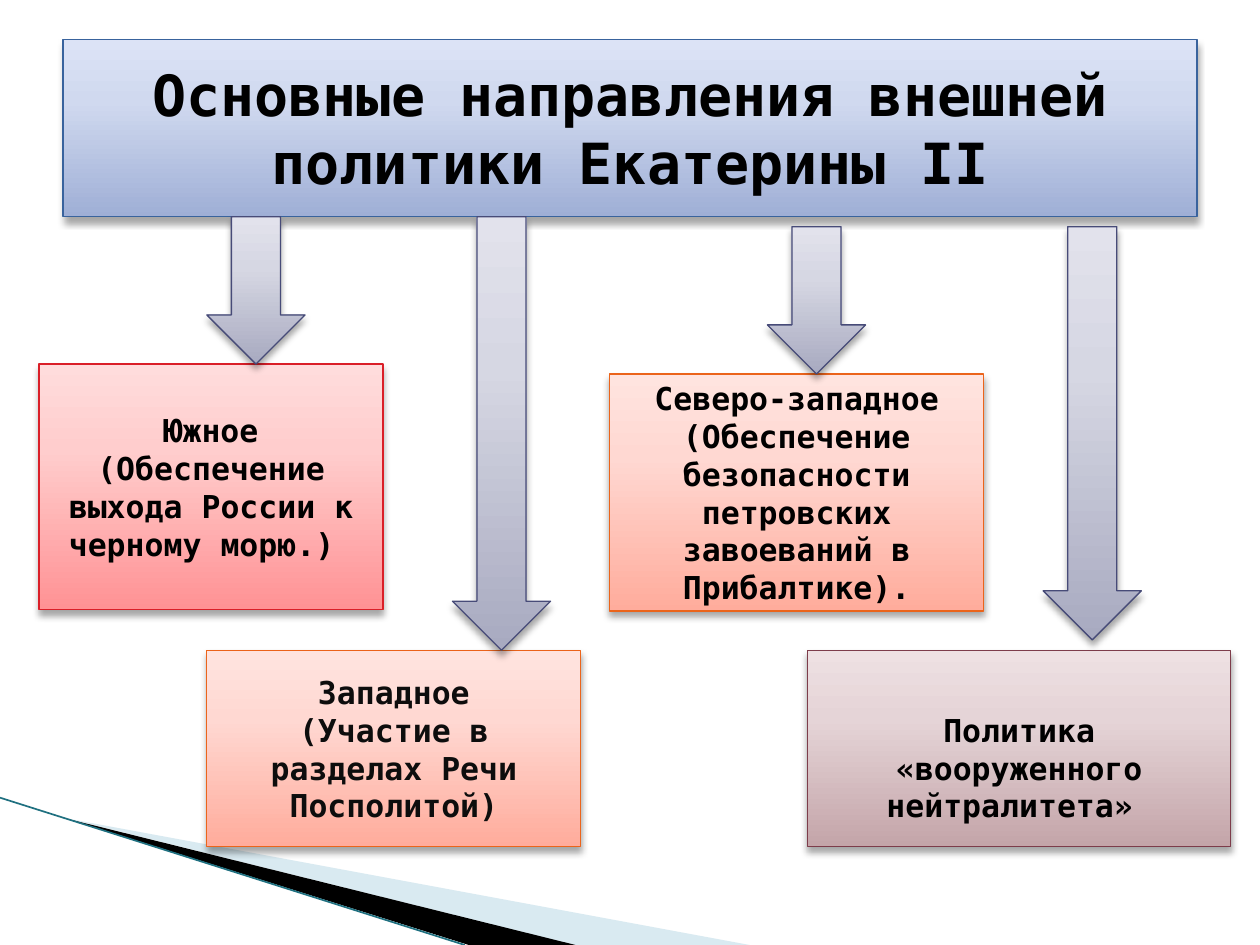
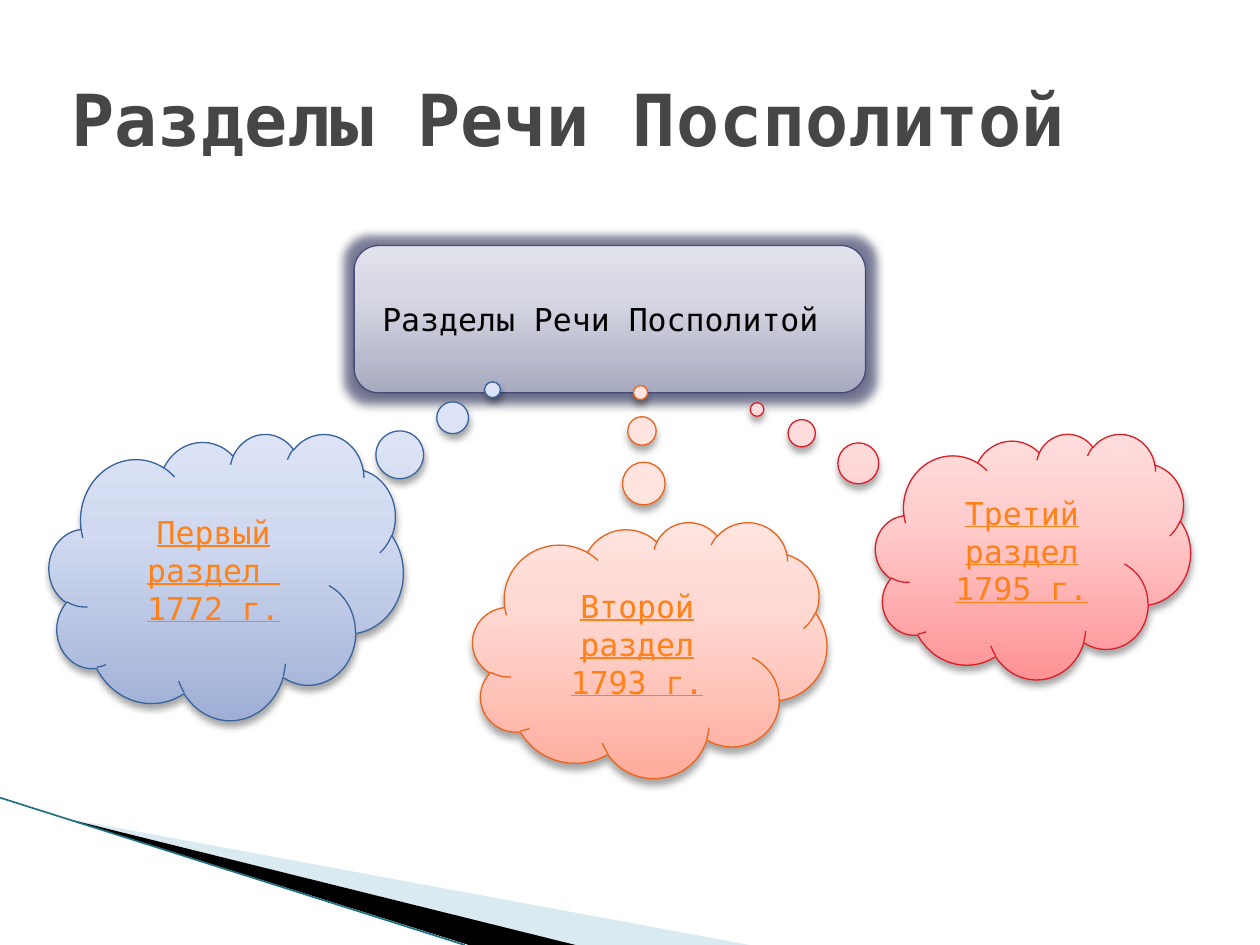
from collections import namedtuple
from copy import deepcopy
from dataclasses import dataclass

from lxml.etree import SubElement
from pptx import Presentation
from pptx.dml.color import RGBColor
from pptx.enum.shapes import MSO_CONNECTOR as Connector, MSO_SHAPE as Shape
from pptx.enum.text import MSO_ANCHOR as Anchor, MSO_AUTO_SIZE as AutoSize, PP_ALIGN as Align
from pptx.oxml.ns import qn
from pptx.util import Cm, Pt

Box = namedtuple("Box", "left top width height")  # centimetres
Tone = namedtuple("Tone", "dark middle light line")


@dataclass(frozen=True)
class Theme:
    font: str = "DejaVu Sans Mono"
    banner_size: float = 32.4
    title_size: float = 41
    text_size: float = 18
    outline: float = 0.75
    black: str = "000000"
    soft_black: str = "0D0D0D"
    grey: str = "464646"
    accent: str = "FF8119"
    pale_blue: str = "A0CBDC"
    teal: str = "1F7080"
    blue: Tone = Tone("9FAFD6", "D0D9EF", "DCE3F6", "39639D")
    red: Tone = Tone("FF9294", "FFCDCD", "FFDCDC", "DA1F28")
    orange: Tone = Tone("FFAC9C", "FFD8D2", "FFE4DF", "EB641B")
    plum: Tone = Tone("C4A5A9", "E5D4D7", "EEE0E2", "7D3C4A")
    slate: Tone = Tone("A8AAC0", "D6D7E3", "E2E2EC", "474B78")


THEME = Theme()
PAGE = Box(0, 0, 25.4, 19.05)


def rgb(code):
    return RGBColor.from_string(code)


def set_values(target, values):
    for name, value in values.items():
        setattr(target, name, value)


def place(shape, box):
    set_values(shape, {name: Cm(value) for name, value in box._asdict().items()})


# Fills and effects
def add_alpha(color, percent):
    SubElement(color, qn("a:alpha"), val=str(percent * 1000))


def add_effect(shape, kind, color, percent, **lengths):
    effects = shape._element.spPr.find(qn("a:effectLst"))
    effect = SubElement(effects, qn(f"a:{kind}"),
                        {name: str(value) for name, value in lengths.items()})
    add_alpha(SubElement(effect, qn("a:srgbClr"), val=color), percent)


def add_shadow(shape, percent=35, blur=4, distance=3):
    add_effect(shape, "outerShdw", THEME.black, percent, blurRad=Pt(blur),
               dist=Pt(distance), dir=90 * 60000, rotWithShape=0)


def paint(shape, tone):
    shape.fill.gradient()
    shape.fill.gradient_angle = 90
    stops = shape._element.spPr.find(qn("a:gradFill")).find(qn("a:gsLst"))
    stops.append(deepcopy(stops[0]))
    for stop, position, color in zip(shape.fill.gradient_stops, (0, 0.65, 1), tone):
        stop.position = position
        stop.color.rgb = rgb(color)
    shape.line.color.rgb = rgb(tone.line)
    shape.line.width = Pt(THEME.outline)
    shape.shadow.inherit = False


# Text
def write(shape, lines, color, size=THEME.text_size, align=Align.CENTER, **style):
    frame = shape.text_frame
    set_values(frame, {"word_wrap": True, "auto_size": AutoSize.NONE,
                       "vertical_anchor": Anchor.MIDDLE})
    for number, line in enumerate(lines):
        para = frame.add_paragraph() if number else frame.paragraphs[0]
        para.alignment = align
        span = para.add_run()
        span.text = line
        set_values(span.font, {"name": THEME.font, "size": Pt(size), **style})
        span.font.color.rgb = rgb(color)


def add_panel(page, kind, box, tone):
    shape = page.shapes.add_shape(kind, *map(Cm, box))
    paint(shape, tone)
    return shape


# Corner band shared by the pages
def add_wedge(page, box, points, color):
    corners = [(Cm(box.left + x), Cm(box.top + y)) for x, y in points]
    builder = page.shapes.build_freeform(*corners[0])
    builder.add_line_segments(corners[1:], close=True)
    wedge = builder.convert_to_shape()
    wedge.fill.solid()
    wedge.fill.fore_color.rgb = rgb(color)
    wedge.line.fill.background()
    wedge.shadow.inherit = False
    return wedge


def add_corner_band(page, box):
    bottom = box.height
    pale = add_wedge(page, box, [(1.4, 0.43), (15.11, bottom), (11.58, bottom)],
                     THEME.pale_blue)
    add_alpha(next(pale._element.spPr.iter(qn("a:srgbClr"))), 40)
    add_wedge(page, box, [(1.37, 0.43), (11.6, bottom), (9.45, bottom)], THEME.black)
    edge = page.shapes.add_connector(
        Connector.STRAIGHT, Cm(box.left), Cm(box.top),
        Cm(box.left + 9.37), Cm(box.top + bottom))
    edge.line.color.rgb = rgb(THEME.teal)
    edge.line.width = Pt(0.95)
    SubElement(edge._element.spPr, qn("a:effectLst"))


def new_page(deck):
    page = deck.slides.add_slide(deck.slide_layouts[5])
    add_corner_band(page, Box(PAGE.left, PAGE.height - 2.97, 15.11, 2.97))
    return page


# Policy direction: a label and the arrow that comes down to it
def add_direction(page, box, tone, lines, arrow_shift, arrow_length, gap=0,
                  color=THEME.black, drop=0):
    label = add_panel(page, Shape.RECTANGLE, box, tone)
    add_shadow(label)
    write(label, lines, color, bold=True)
    label.text_frame.margin_top = Cm(0.13 + drop)
    arrow_box = Box(box.left + arrow_shift, box.top - gap - arrow_length, 1.98, arrow_length)
    add_shadow(add_panel(page, Shape.DOWN_ARROW, arrow_box, THEME.slate))


def add_directions_page(deck):
    page = new_page(deck)
    banner = page.shapes.title
    place(banner, Box(1.27, 0.79, 22.86, 3.58))
    paint(banner, THEME.blue)
    add_shadow(banner)
    write(banner, ["Основные направления внешней политики Екатерины II"],
          THEME.black, THEME.banner_size, bold=True)

    add_direction(page, Box(0.79, 7.34, 6.93, 4.95), THEME.red,
                  ["Южное", "(Обеспечение выхода России к черному морю.) "], 3.38, 2.97)
    add_direction(page, Box(16.28, 13.11, 8.53, 3.96), THEME.plum,
                  ["Политика «вооруженного нейтралитета» "], 4.75, 8.33,
                  gap=0.21, drop=0.76)
    add_direction(page, Box(12.29, 7.54, 7.54, 4.78), THEME.orange,
                  ["Северо-западное",
                   "(Обеспечение безопасности петровских завоеваний в Прибалтике)."],
                  3.18, 2.97)
    add_direction(page, Box(4.17, 13.11, 7.54, 3.96), THEME.orange,
                  ["Западное", "(Участие в разделах Речи Посполитой)"], 4.95, 8.74,
                  color=THEME.soft_black)


# Partition: a cloud whose bubbles lead to the topic
def add_partition(page, box, tone, lines, tail):
    cloud = add_panel(page, Shape.CLOUD_CALLOUT, box, tone)
    cloud.adjustments[0], cloud.adjustments[1] = tail
    add_shadow(cloud)
    write(cloud, lines, THEME.accent, underline=True)


def add_topic(page, box):
    topic = add_panel(page, Shape.ROUNDED_RECTANGLE, box, THEME.slate)
    add_effect(topic, "glow", THEME.slate.line, 60, rad=Pt(11))
    add_shadow(topic, percent=38, blur=3.1, distance=1.6)
    write(topic, ["Разделы Речи Посполитой "], THEME.black)


def add_partitions_page(deck):
    page = new_page(deck)
    title = page.shapes.title
    place(title, Box(1.19, 0.79, 22.86, 3.18))
    write(title, ["Разделы Речи Посполитой"], THEME.grey, THEME.title_size,
          Align.LEFT, bold=True)

    add_topic(page, Box(7.14, 4.95, 10.31, 2.97))
    add_partition(page, Box(0.99, 8.74, 7.14, 5.77), THEME.blue,
                  ["Первый раздел ", "1772 г."], (0.752, -0.653))
    add_partition(page, Box(9.53, 10.52, 7.14, 5.16), THEME.orange,
                  ["Второй раздел", "1793 г."], (-0.026, -1.005))
    add_partition(page, Box(17.65, 8.74, 6.35, 4.95), THEME.red,
                  ["Третий раздел", "1795 г."], (-0.876, -0.598))


def main():
    deck = Presentation()
    deck.slide_width, deck.slide_height = Cm(PAGE.width), Cm(PAGE.height)
    add_directions_page(deck)
    add_partitions_page(deck)
    deck.save("out.pptx")


if __name__ == "__main__":
    main()
